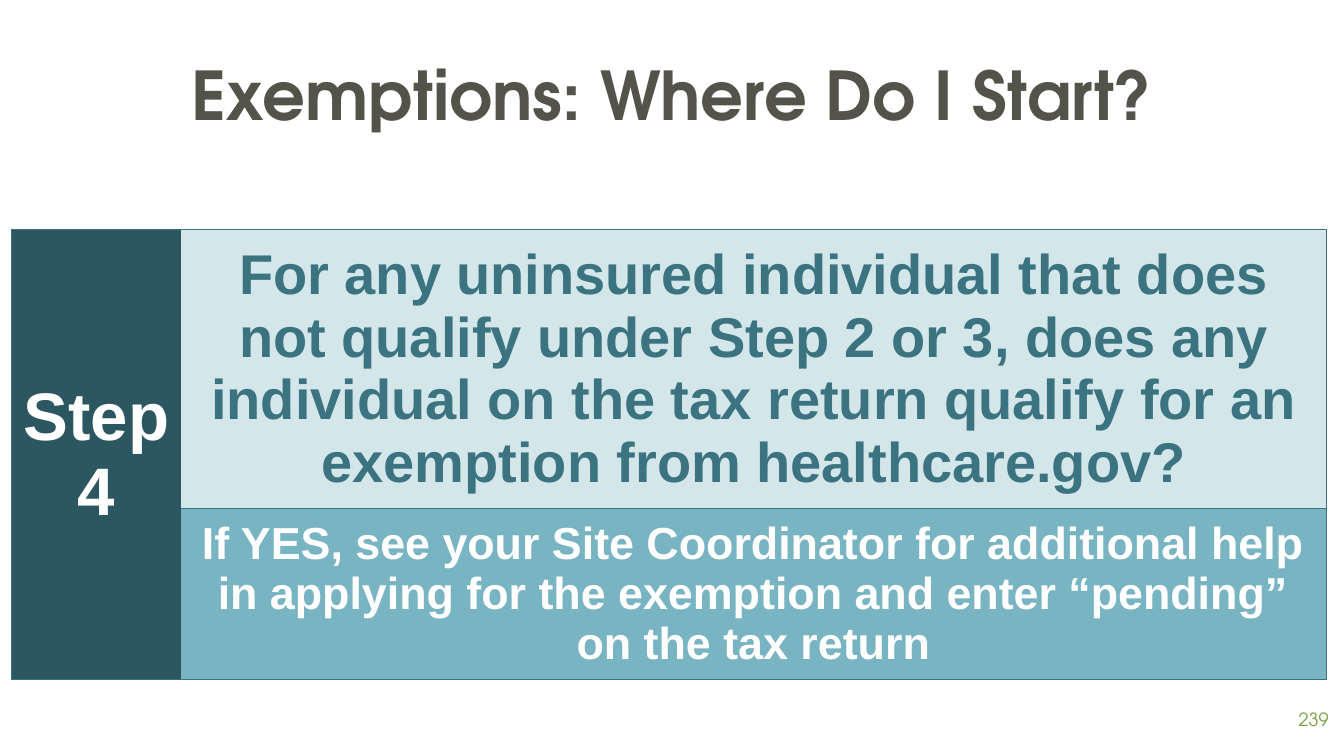
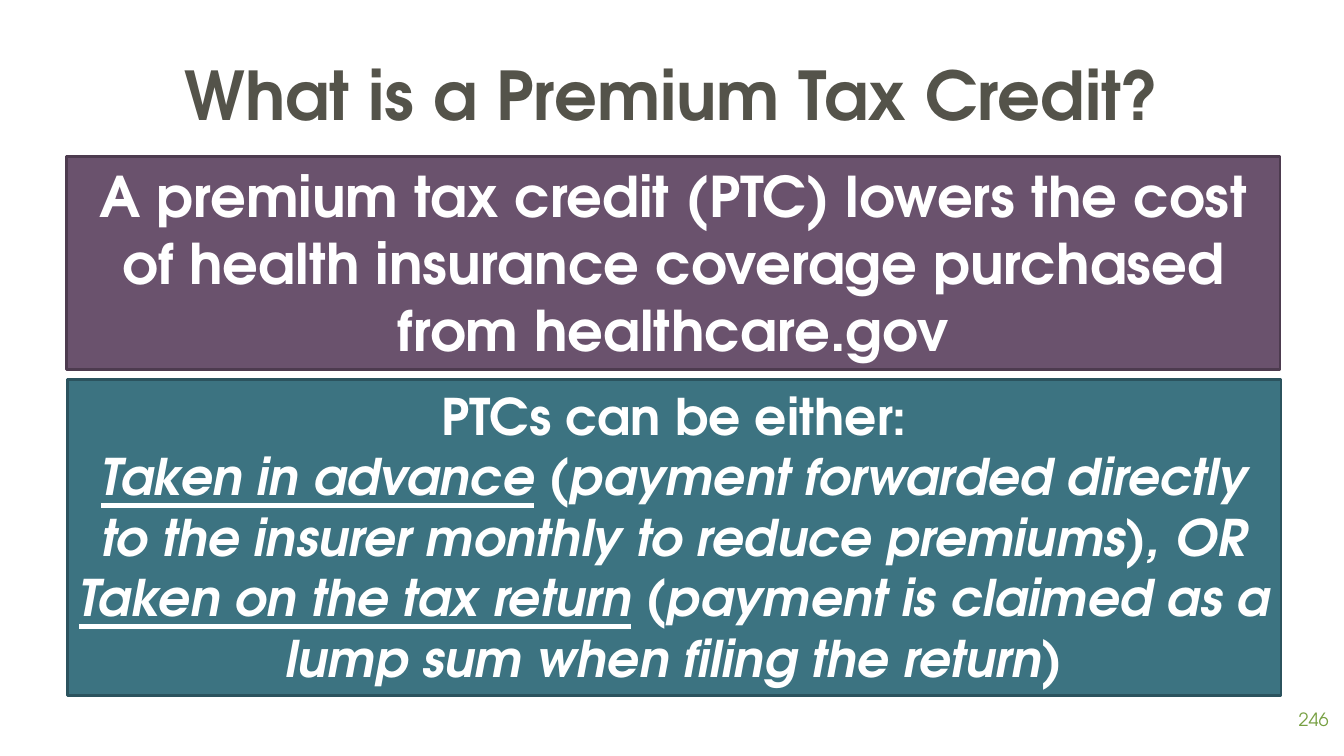
from lxml import etree
from pptx import Presentation
from pptx.dml.color import RGBColor
from pptx.enum.shapes import MSO_SHAPE
from pptx.enum.text import MSO_ANCHOR, MSO_AUTO_SIZE, PP_ALIGN
from pptx.oxml.ns import qn
from pptx.util import Pt

RECTANGLE = MSO_SHAPE.RECTANGLE
TOP, MIDDLE = MSO_ANCHOR.TOP, MSO_ANCHOR.MIDDLE
CENTER, RIGHT = PP_ALIGN.CENTER, PP_ALIGN.RIGHT
NO_AUTOFIT = MSO_AUTO_SIZE.NONE

COLORS = {
    "title": "54534A", "number": "77A042", "white": "FFFFFF",
    "teal": "3C7381", "teal_dark": "2C5660", "teal_line": "2B535E",
    "teal_mid": "79B4C2", "teal_pale": "D3E6E9",
    "plum": "6A526D", "plum_line": "4D3B4F",
}
HEADING_FONT, TABLE_FONT = "TeX Gyre Adventor", "Arial"


def write(frame, paragraphs, color, align=CENTER, **font_format):
    """Fill a frame; each paragraph is a list of (text, extra format) spans."""
    frame.word_wrap = True
    for index, spans in enumerate(paragraphs):
        para = frame.paragraphs[0] if index == 0 else frame.add_paragraph()
        para.alignment = align
        for text, extra in spans:
            span = para.add_run()
            span.text = text
            span.font.color.rgb = RGBColor.from_string(COLORS[color])
            for name, value in {**font_format, **extra}.items():
                setattr(span.font, name, value)


def add_page(title, number):
    """Add a slide with the shared title style and page number."""
    page = deck.slides.add_slide(deck.slide_layouts[5])
    heading = page.shapes.title
    heading.left, heading.top = Pt(48), Pt(21.6)
    heading.width, heading.height = Pt(864), Pt(90)
    frame = heading.text_frame
    frame.auto_size, frame.vertical_anchor = NO_AUTOFIT, MIDDLE
    write(frame, [[(title, {})]], "title",
          name=HEADING_FONT, size=Pt(48), bold=True)
    box = page.shapes.add_textbox(Pt(898.6), Pt(499), Pt(57.6), Pt(41))
    for side in ("left", "top", "right", "bottom"):
        setattr(box.text_frame, f"margin_{side}", Pt(7.2))
    write(box.text_frame, [[(number, {})]], "number", RIGHT,
          name=HEADING_FONT, size=Pt(13))
    return page


deck = Presentation()
deck.slide_width, deck.slide_height = Pt(960), Pt(540)

# Slide 1: step table
page = add_page("Exemptions: Where Do I Start?", "239")
table = page.shapes.add_table(2, 2, Pt(8.3), Pt(164), Pt(939), Pt(301)).table
table.first_row = table.horz_banding = False
for column, width in zip(table.columns, (121, 818)):
    column.width = Pt(width)
for row, height in zip(table.rows, (186, 115)):
    row.height = Pt(height)
table.cell(0, 0).merge(table.cell(1, 0))

# Row, column, fill, bordered sides
cell_styles = [
    (0, 0, "teal_dark", "LTB"), (1, 0, "teal_dark", "LB"),
    (0, 1, "teal_pale", "RTB"), (1, 1, "teal_mid", "RTB"),
]
for row, column, fill, sides in cell_styles:
    cell = table.cell(row, column)
    properties = cell._tc.get_or_add_tcPr()
    for side in "LRTB":
        line = etree.SubElement(properties, qn(f"a:ln{side}"), w=str(Pt(0.75)))
        if side in sides:
            paint = etree.SubElement(line, qn("a:solidFill"))
            etree.SubElement(paint, qn("a:srgbClr"), val=COLORS["teal"])
        else:
            etree.SubElement(line, qn("a:noFill"))
    cell.fill.solid()
    cell.fill.fore_color.rgb = RGBColor.from_string(COLORS[fill])
    cell.vertical_anchor = MIDDLE

# Row, column, size, text color, text
cell_texts = [
    (0, 0, 48, "white", "Step 4"),
    (0, 1, 40, "teal",
     "For any uninsured individual that does not qualify under Step 2 or 3, "
     "does any individual on the tax return qualify for an exemption from "
     "healthcare.gov?"),
    (1, 1, 32, "white",
     "If YES, see your Site Coordinator for additional help in applying for "
     "the exemption and enter “pending” on the tax return"),
]
for row, column, size, color, text in cell_texts:
    write(table.cell(row, column).text_frame, [[(text, {})]], color,
          name=TABLE_FONT, size=Pt(size), bold=True)

# Slide 2: definition and the two ways to take the credit
page = add_page("What is a Premium Tax Credit?", "246")
italic = {"italic": True}
key_term = {"italic": True, "underline": True}
definition = [[("A premium tax credit (PTC) lowers the cost of health "
                "insurance coverage purchased from healthcare.gov", {})]]
choices = [
    [("PTCs can be either:", {})],
    [("Taken in advance", key_term), (" ", {}),
     ("(payment forwarded directly to the insurer monthly to reduce "
      "premiums), OR", italic)],
    [("Taken on the tax return", key_term),
     (" (payment is claimed as a lump sum when filing the return)", italic)],
]
# Left, top, height, fill, line, size, paragraphs
panels = [
    (47.5, 111.6, 152.6, "plum", "plum_line", 40, definition),
    (48.2, 271.4, 225.4, "teal", "teal_line", 36, choices),
]
for left, top, height, fill, line, size, paragraphs in panels:
    panel = page.shapes.add_shape(RECTANGLE, Pt(left), Pt(top), Pt(866.9), Pt(height))
    panel.shadow.inherit = False
    panel.fill.solid()
    panel.fill.fore_color.rgb = RGBColor.from_string(COLORS[fill])
    panel.line.color.rgb = RGBColor.from_string(COLORS[line])
    panel.line.width = Pt(2)
    panel.text_frame.vertical_anchor = TOP
    write(panel.text_frame, paragraphs, "white",
          name=HEADING_FONT, size=Pt(size), bold=True)

deck.save("out.pptx")
